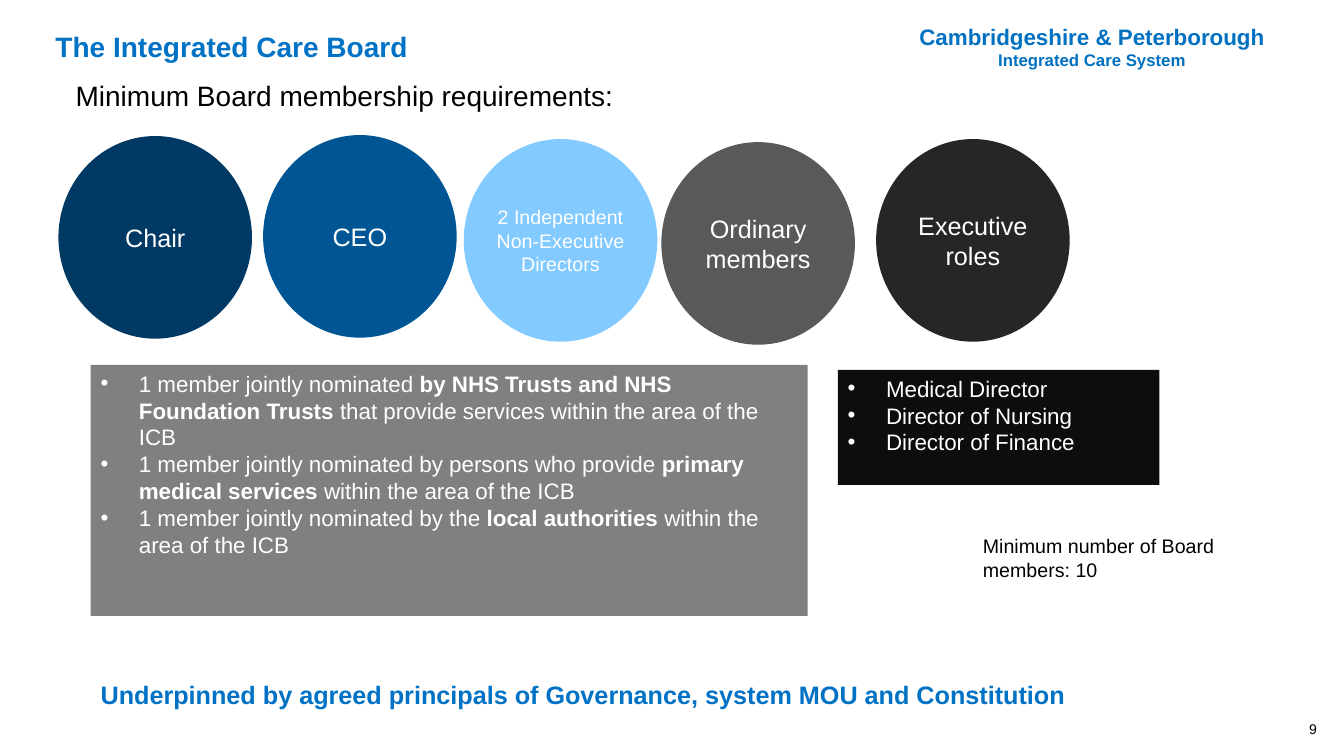
from pptx import Presentation
from pptx import util as u
from pptx.dml.color import RGBColor
from pptx.enum import shapes, text
from pptx.oxml.ns import qn
from lxml import etree

SLIDE_WIDTH, SLIDE_HEIGHT = u.Inches(13.33), u.Inches(7.5)
CIRCLE_SIZE = (14.4, 26.8)
BLUE, WHITE, BLACK = "0072C6", "FFFFFF", "000000"
CENTER = text.PP_ALIGN.CENTER

CIRCLES = [
    (["Chair"], 4.35, 18, "003963", 18),
    (["CEO"], 19.58, 17.87, "005694", 18),
    (["2 Independent", "Non-Executive Directors"], 34.51, 18.4, "82CAFF", 14),
    (["Ordinary members"], 49.21, 18.8, "595959", 18),
    (["Executive roles"], 65.19, 18.4, "262626", 18),
]
ORDINARY_MEMBERS = [
    "1 member jointly nominated **by NHS Trusts and NHS Foundation Trusts** "
    "that provide services within the area of the ICB",
    "1 member jointly nominated by persons who provide "
    "**primary medical services **within the area of the ICB",
    "1 member jointly nominated by the **local authorities **within the area of the ICB",
]
EXECUTIVE_ROLES = ["Medical Director", "Director of Nursing", "Director of Finance"]


def color(value):
    """Turn a hex string into a colour."""
    return RGBColor.from_string(value)


def box(left, top, width, height):
    """Turn percentages of the slide's size into lengths."""
    return (int(SLIDE_WIDTH * left / 100), int(SLIDE_HEIGHT * top / 100),
            int(SLIDE_WIDTH * width / 100), int(SLIDE_HEIGHT * height / 100))


def set_values(target, values):
    """Set attributes of an object from a dict."""
    for name, value in values.items():
        setattr(target, name, value)


def add_bullet(paragraph):
    """Give a paragraph a white bullet and a hanging indent."""
    properties = paragraph._p.get_or_add_pPr()
    indent = u.Inches(0.38)
    properties.set("marL", str(indent))
    properties.set("indent", str(-indent))
    bullet_color = etree.SubElement(properties, qn("a:buClr"))
    etree.SubElement(bullet_color, qn("a:srgbClr")).set("val", WHITE)
    etree.SubElement(properties, qn("a:buFont")).set("typeface", "Arial")
    etree.SubElement(properties, qn("a:buChar")).set("char", "•")


def write(shape, lines, sizes, ink, bold=False, align=text.PP_ALIGN.LEFT,
          anchor=text.MSO_ANCHOR.TOP, bullets=False, frame_values=None):
    """Write paragraphs, with double asterisks around bold passages."""
    frame = shape.text_frame
    set_values(frame, {"word_wrap": True, "auto_size": text.MSO_AUTO_SIZE.NONE,
                       "vertical_anchor": anchor, **(frame_values or {})})
    for index, line in enumerate(lines):
        paragraph = frame.paragraphs[0] if index == 0 else frame.add_paragraph()
        paragraph.alignment = align
        if bullets:
            add_bullet(paragraph)
        for part, passage in enumerate(line.split("**")):
            run = paragraph.add_run()
            run.text = passage
            set_values(run.font, {"name": "Arial", "size": u.Pt(sizes[index % len(sizes)]),
                                  "bold": bold or part % 2 == 1})
            run.font.color.rgb = color(ink)


def add_label(slide, position, lines, sizes, ink, **options):
    """Add a text box."""
    write(slide.shapes.add_textbox(*box(*position)), lines, sizes, ink, **options)


def add_filled(slide, kind, position, fill, lines, size, **options):
    """Add a filled shape without outline, holding white text."""
    shape = slide.shapes.add_shape(kind, *box(*position))
    shape.shadow.inherit = False
    shape.fill.solid()
    shape.fill.fore_color.rgb = color(fill)
    shape.line.fill.background()
    write(shape, lines, [size], WHITE, **options)


def add_title(slide, position, title):
    """Place and format the title placeholder."""
    shape = slide.shapes.title
    set_values(shape, dict(zip(("left", "top", "width", "height"), box(*position))))
    write(shape, [title], [20], BLUE, bold=True, anchor=text.MSO_ANCHOR.MIDDLE)


def main():
    """Build the slide and save it."""
    presentation = Presentation()
    set_values(presentation, {"slide_width": SLIDE_WIDTH, "slide_height": SLIDE_HEIGHT})
    slide = presentation.slides.add_slide(presentation.slide_layouts[5])
    add_title(slide, (3.38, 1.9, 41.04, 8.4), "The Integrated Care Board")
    add_label(slide, (63.77, 2.4, 34.96, 7.6),
              ["Cambridgeshire & Peterborough", "Integrated Care System"],
              [16, 12], "0070C0", bold=True, align=CENTER)
    add_label(slide, (4.88, 9.73, 67.52, 5.87),
              ["Minimum Board membership requirements:"], [20], BLACK)

    margins = dict.fromkeys(("margin_left", "margin_top", "margin_right", "margin_bottom"),
                            u.Inches(0.04))
    for lines, left, top, fill, size in CIRCLES:
        add_filled(slide, shapes.MSO_SHAPE.OVAL, (left, top, *CIRCLE_SIZE), fill, lines, size,
                   align=CENTER, anchor=text.MSO_ANCHOR.MIDDLE, frame_values=margins)

    rectangle = shapes.MSO_SHAPE.RECTANGLE
    add_filled(slide, rectangle, (6.75, 48.27, 53.34, 33.2), "808080",
               ORDINARY_MEMBERS, 16, bullets=True)
    add_filled(slide, rectangle, (62.34, 48.93, 23.93, 15.2), "0D0D0D",
               EXECUTIVE_ROLES, 16, bullets=True)

    add_label(slide, (72.39, 70, 20.93, 7.6),
              ["Minimum number of Board members: 10"], [14], BLACK)
    add_label(slide, (6.75, 89.2, 81.85, 5.33),
              ["Underpinned by agreed principals of Governance, system MOU and Constitution"],
              [18], BLUE, bold=True)
    add_label(slide, (75.54, 94.67, 23.18, 3.2), ["9"], [10], BLACK,
              align=text.PP_ALIGN.RIGHT)
    presentation.save("out.pptx")


if __name__ == "__main__":
    main()
